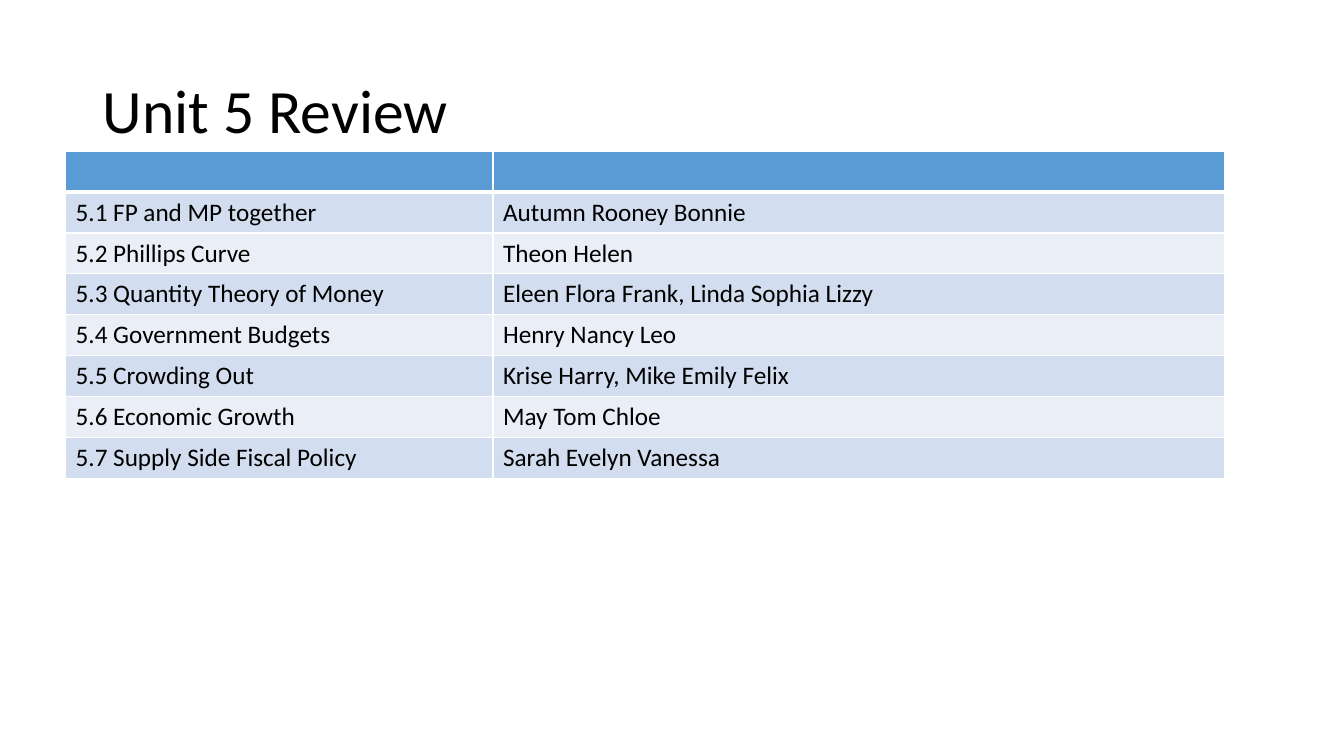
import pptx
import pptx.dml.color
import pptx.enum.text
import pptx.oxml
import pptx.oxml.ns
import pptx.util

Inches = pptx.util.Inches
RGBColor = pptx.dml.color.RGBColor

BLACK = RGBColor(0x00, 0x00, 0x00)
WHITE = RGBColor(0xFF, 0xFF, 0xFF)
HEADER_BLUE = RGBColor(0x5B, 0x9B, 0xD5)
BANDS = (RGBColor(0xD2, 0xDE, 0xEF), RGBColor(0xEA, 0xEF, 0xF7))

TITLE_FONT = {"name": "Calibri", "size": pptx.util.Pt(44), "bold": False}
CELL_FONT = {"name": "Calibri", "size": pptx.util.Pt(18), "bold": False}

TITLE_BOX = (0.92, 0.4, 11.5, 1.45)
TABLE_BOX = (0.65, 1.5, 11.5, 3.24)
TOPIC_WIDTH = 4.24

REVIEW_ROWS = [
    ("", ""),
    ("5.1 FP and MP together", "Autumn Rooney Bonnie"),
    ("5.2 Phillips Curve", "Theon Helen"),
    ("5.3 Quantity Theory of Money", "Eleen Flora Frank, Linda Sophia Lizzy"),
    ("5.4 Government Budgets", "Henry Nancy Leo"),
    ("5.5 Crowding Out", "Krise Harry, Mike Emily Felix"),
    ("5.6 Economic Growth", "May Tom Chloe"),
    ("5.7 Supply Side Fiscal Policy", "Sarah Evelyn Vanessa"),
]


def format_font(font, values):
    """Apply a dict of font values in black."""
    for name, value in values.items():
        setattr(font, name, value)
    font.color.rgb = BLACK


def add_title(slide, box, text):
    """Place the title placeholder in the box."""
    title = slide.shapes.title
    for name, value in zip(("left", "top", "width", "height"), box):
        setattr(title, name, Inches(value))
    frame = title.text_frame
    frame.text = text
    frame.word_wrap = True
    frame.vertical_anchor = pptx.enum.text.MSO_ANCHOR.MIDDLE
    paragraph = frame.paragraphs[0]
    paragraph.alignment = pptx.enum.text.PP_ALIGN.LEFT
    paragraph.line_spacing = 0.9
    format_font(paragraph.runs[0].font, TITLE_FONT)


def add_borders(cell, top, bottom):
    """Draw white cell borders, with top and bottom widths in points."""
    properties = cell._tc.get_or_add_tcPr()
    for side, width in (("L", 1), ("R", 1), ("T", top), ("B", bottom)):
        properties.append(pptx.oxml.parse_xml(
            f'<a:ln{side} {pptx.oxml.ns.nsdecls("a")} w="{pptx.util.Pt(width)}">'
            f'<a:solidFill><a:srgbClr val="{WHITE}"/></a:solidFill></a:ln{side}>'))


def add_review_table(slide, box, rows):
    """Fill the box with a header row and banded topic rows."""
    left, top, width, height = box
    table = slide.shapes.add_table(
        len(rows), 2, *(Inches(value) for value in box)).table
    table.columns[0].width = Inches(TOPIC_WIDTH)
    table.columns[1].width = Inches(width - TOPIC_WIDTH)
    for index, texts in enumerate(rows):
        table.rows[index].height = Inches(height / len(rows))
        for cell, text in zip(table.rows[index].cells, texts):
            add_borders(cell, 3 if index == 1 else 1, 3 if index == 0 else 1)
            cell.fill.solid()
            cell.fill.fore_color.rgb = BANDS[(index - 1) % 2] if index else HEADER_BLUE
            cell.text = text
            format_font(cell.text_frame.paragraphs[0].font, CELL_FONT)
            for run in cell.text_frame.paragraphs[0].runs:
                format_font(run.font, CELL_FONT)


def main():
    """Build and save the review slide."""
    presentation = pptx.Presentation()
    presentation.slide_width = Inches(13.33)
    presentation.slide_height = Inches(7.5)
    slide = presentation.slides.add_slide(presentation.slide_layouts[5])
    add_title(slide, TITLE_BOX, "Unit 5 Review")
    add_review_table(slide, TABLE_BOX, REVIEW_ROWS)
    presentation.save("out.pptx")


if __name__ == "__main__":
    main()
